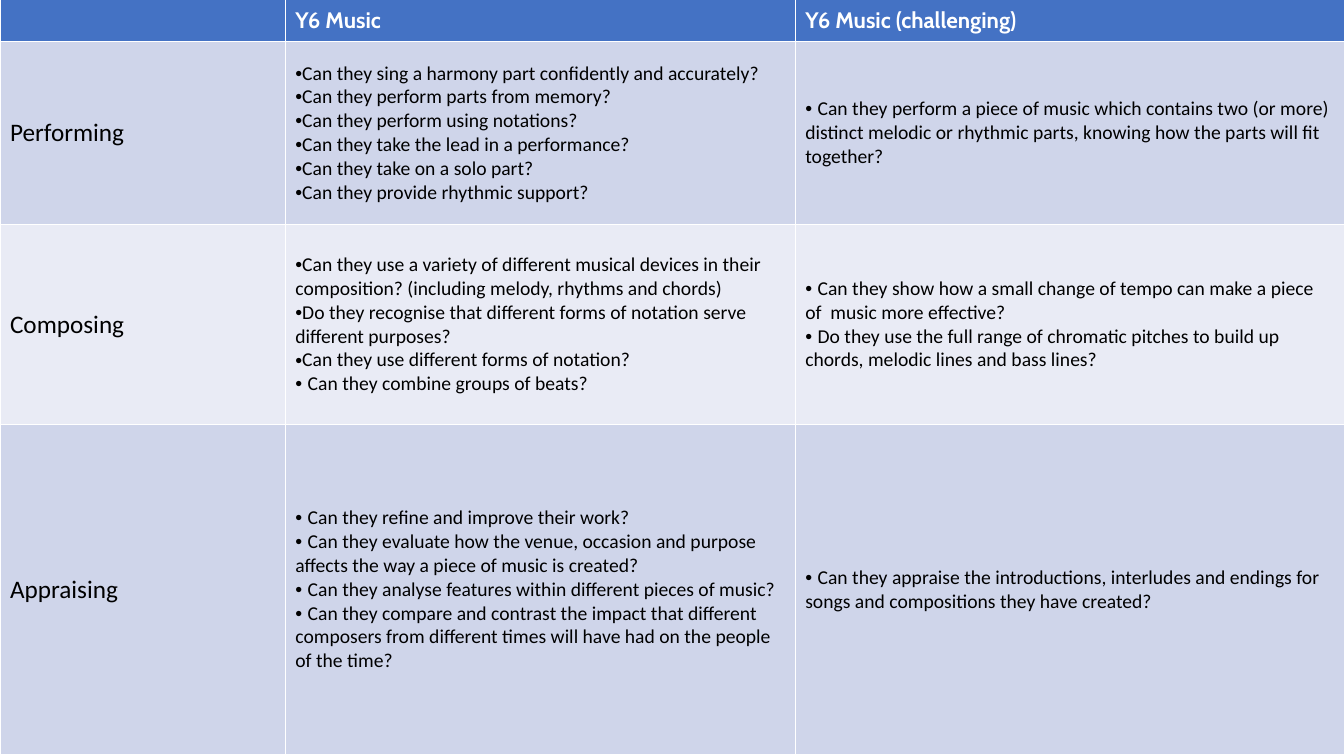
from dataclasses import dataclass

from lxml import etree
from pptx import Presentation
from pptx.dml.color import RGBColor
from pptx.enum import text
from pptx.oxml import ns
from pptx.util import Cm, Pt

BLUE = RGBColor(0x44, 0x72, 0xC4)
BAND_DARK = RGBColor(0xCF, 0xD5, 0xEA)
BAND_LIGHT = RGBColor(0xE9, 0xEB, 0xF5)
WHITE = RGBColor(0xFF, 0xFF, 0xFF)
BLACK = RGBColor(0, 0, 0)

TYPED_BULLET = "• "


@dataclass(frozen=True)
class Style:
    font: str
    size: int
    color: RGBColor
    bold: bool = False
    bulleted: bool = False


HEADING = Style("Cabin", 16, WHITE, bold=True)
STRAND = Style("Calibri", 18, BLACK)
QUESTION = Style("Calibri", 14, BLACK, bulleted=True)


@dataclass(frozen=True)
class Strand:
    name: str
    height: float
    expected: list[str]
    challenging: list[str]


HEADINGS = ["", "Y6 Music", "Y6 Music (challenging)"]
HEADING_HEIGHT = 1.07
COLUMN_WIDTHS = [7.19, 12.85, 13.84]

# Questions that begin with a typed bullet keep it; the others get a list bullet
STRANDS = [
    Strand("Performing", 4.62, [
        "Can they sing a harmony part confidently and accurately?",
        "Can they perform parts from memory?",
        "Can they perform using notations?",
        "Can they take the lead in a performance?",
        "Can they take on a solo part?",
        "Can they provide rhythmic support?",
    ], [
        "• Can they perform a piece of music which contains two (or more) distinct "
        "melodic or rhythmic parts, knowing how the parts will fit together?",
    ]),
    Strand("Composing", 5.03, [
        "Can they use a variety of different musical devices in their composition? "
        "(including melody, rhythms and chords)",
        "Do they recognise that different forms of notation serve different purposes?",
        "Can they use different forms of notation?",
        "• Can they combine groups of beats?",
    ], [
        "• Can they show how a small change of tempo can make a piece of  music "
        "more effective?",
        "• Do they use the full range of chromatic pitches to build up chords, "
        "melodic lines and bass lines?",
    ]),
    Strand("Appraising", 8.33, [
        "• Can they refine and improve their work?",
        "• Can they evaluate how the venue, occasion and purpose affects the way "
        "a piece of music is created?",
        "• Can they analyse features within different pieces of music?",
        "• Can they compare and contrast the impact that different composers from "
        "different times will have had on the people of the time?",
    ], [
        "• Can they appraise the introductions, interludes and endings for songs "
        "and compositions they have created?",
    ]),
]


def write_line(paragraph, line: str, style: Style) -> None:
    font = paragraph.font
    font.size = Pt(style.size)
    font.bold = style.bold
    font.color.rgb = style.color
    if line.startswith(TYPED_BULLET):
        bullet = paragraph.add_run()
        bullet.text = TYPED_BULLET
        bullet.font.name = "Arial"
        question = paragraph.add_run()
        question.text = line.removeprefix(TYPED_BULLET)
        question.font.name = style.font
        return
    font.name = style.font
    paragraph.add_run().text = line
    if style.bulleted:
        # List bullet; it must come before the paragraph's default font
        properties = paragraph._p.get_or_add_pPr()
        bullet_font = etree.Element(ns.qn("a:buFont"), typeface="Arial")
        bullet_char = etree.Element(ns.qn("a:buChar"), char="•")
        properties.insert(0, bullet_font)
        properties.insert(1, bullet_char)


def fill_cell(cell, lines: list[str], style: Style, fill: RGBColor) -> None:
    cell.fill.solid()
    cell.fill.fore_color.rgb = fill
    cell.vertical_anchor = text.MSO_ANCHOR.MIDDLE
    frame = cell.text_frame
    for index, line in enumerate(lines):
        paragraph = frame.add_paragraph() if index else frame.paragraphs[0]
        write_line(paragraph, line, style)


def main() -> None:
    deck = Presentation()
    deck.slide_width, deck.slide_height = Cm(33.87), Cm(19.05)
    slide = deck.slides.add_slide(deck.slide_layouts[6])

    # Table grid
    heights = [HEADING_HEIGHT] + [strand.height for strand in STRANDS]
    curriculum = slide.shapes.add_table(
        len(heights), len(COLUMN_WIDTHS), Cm(0), Cm(-0.03),
        Cm(sum(COLUMN_WIDTHS)), Cm(sum(heights))).table
    for column, width in zip(curriculum.columns, COLUMN_WIDTHS):
        column.width = Cm(width)
    for row, height in zip(curriculum.rows, heights):
        row.height = Cm(height)

    # Heading row
    for cell, heading in zip(curriculum.rows[0].cells, HEADINGS):
        fill_cell(cell, [heading] if heading else [], HEADING, BLUE)

    # One banded row per strand
    for number, strand in enumerate(STRANDS, start=1):
        band = BAND_DARK if number % 2 else BAND_LIGHT
        name, expected, challenging = curriculum.rows[number].cells
        fill_cell(name, [strand.name], STRAND, band)
        fill_cell(expected, strand.expected, QUESTION, band)
        fill_cell(challenging, strand.challenging, QUESTION, band)

    deck.save("out.pptx")


if __name__ == "__main__":
    main()
